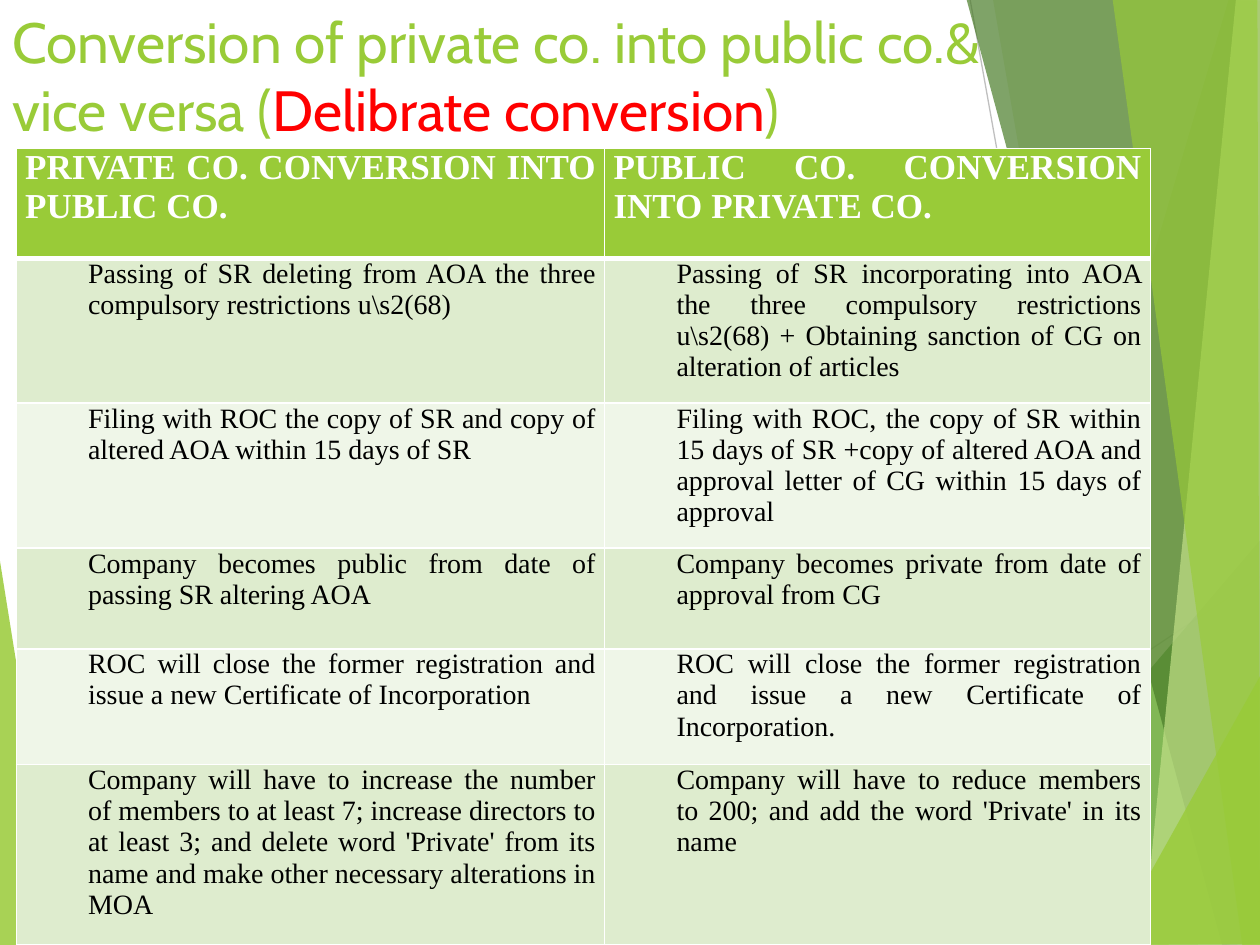
from dataclasses import dataclass

from lxml import etree
from pptx import Presentation
from pptx.dml.color import RGBColor
from pptx.enum.shapes import MSO_CONNECTOR
from pptx.enum.text import MSO_ANCHOR, MSO_AUTO_SIZE, PP_ALIGN
from pptx.oxml.ns import qn
from pptx.util import Inches, Pt

STRAIGHT = MSO_CONNECTOR.STRAIGHT
TOP = MSO_ANCHOR.TOP
NO_AUTOFIT = MSO_AUTO_SIZE.NONE
LEFT = PP_ALIGN.LEFT
JUSTIFY = PP_ALIGN.JUSTIFY

LIME = RGBColor(0x99, 0xCB, 0x38)
GREEN = RGBColor(0x63, 0xA5, 0x37)
FOREST = RGBColor(0x4A, 0x7C, 0x29)
PALE_LIME = RGBColor(0xC2, 0xE0, 0x88)
LIGHT_GRAY = RGBColor(0xD9, 0xD9, 0xD9)
GRAY = RGBColor(0xBF, 0xBF, 0xBF)
RED = RGBColor(0xFF, 0x00, 0x00)
WHITE = RGBColor(0xFF, 0xFF, 0xFF)
BLACK = RGBColor(0x00, 0x00, 0x00)
BANDS = (RGBColor(0xDE, 0xEC, 0xCE), RGBColor(0xEF, 0xF6, 0xE8))

Point = tuple[float, float]


@dataclass(frozen=True)
class Facet:
    points: tuple[Point, ...]
    color: RGBColor
    opacity: int


@dataclass(frozen=True)
class Ray:
    start: Point
    end: Point
    color: RGBColor


LEFT_FACET = Facet(((-0.01, 4.39), (0.49, 7.51), (-0.01, 7.5)), LIME, 85)
RAYS = (
    Ray((5.61, 7.5), (10.01, 4.57), LIGHT_GRAY),
    Ray((7.7, 0), (9.04, 7.5), GRAY),
)
RIGHT_FACETS = (
    Facet(((9.75, 0), (7.54, 7.5), (10.02, 7.51), (10.01, 0.01)), LIME, 30),
    Facet(((7.88, -0.01), (9.19, 7.5), (10.01, 7.5), (10.01, -0.01)), LIME, 20),
    Facet(((7.26, 7.5), (10, 4.29), (10.01, 7.5)), GREEN, 72),
    Facet(((7.67, -0.01), (9.7, 7.5), (10.01, 7.49), (10.01, -0.01)), FOREST, 70),
    Facet(((9.81, -0.01), (9.07, 7.5), (10.01, 7.5), (10, -0.01)), PALE_LIME, 70),
    Facet(((8.83, -0.01), (9.86, 7.5), (10, 7.5), (9.98, -0.01)), LIME, 65),
    Facet(((8.81, 7.5), (10.01, 5.35), (10.01, 7.49)), LIME, 80),
)

TITLE_RUNS = (
    ("Conversion of private co. into public co.& vice versa (", LIME),
    ("Delibrate conversion", RED),
    (")", LIME),
)
COLUMN_WIDTHS = (4.67, 4.33)
ROW_HEIGHTS = (0.87, 1.15, 1.15, 0.8, 0.92, 1.43)
ROWS = (
    ("PRIVATE CO. CONVERSION INTO PUBLIC CO.",
     "PUBLIC CO. CONVERSION INTO PRIVATE CO."),
    ("Passing of SR deleting from AOA the three compulsory restrictions u\\s2(68)",
     "Passing of SR incorporating into AOA the three compulsory restrictions "
     "u\\s2(68) + Obtaining sanction of CG on alteration of articles"),
    ("Filing with ROC the copy of SR and copy of altered AOA within 15 days of SR",
     "Filing with ROC, the copy of SR within 15 days of SR +copy of altered AOA "
     "and approval letter of CG within 15 days of approval"),
    ("Company becomes public from date of passing SR altering AOA",
     "Company becomes private from date of approval from CG"),
    ("ROC will close the former registration and issue a new Certificate of Incorporation",
     "ROC will close the former registration and issue a new Certificate of Incorporation."),
    ("Company will have to increase the number of members to at least 7; increase "
     "directors to at least 3; and delete word 'Private' from its name and make "
     "other necessary alterations in MOA",
     "Company will have to reduce members to 200; and add the word 'Private' in its name"),
)


def draw_facet(slide, facet: Facet) -> None:
    points = [(Inches(x), Inches(y)) for x, y in facet.points]
    builder = slide.shapes.build_freeform(*points[0])
    builder.add_line_segments(points[1:], close=True)
    shape = builder.convert_to_shape()
    shape.shadow.inherit = False
    shape.line.fill.background()
    shape.fill.solid()
    shape.fill.fore_color.rgb = facet.color
    color = shape._element.spPr.find(qn("a:solidFill"))[0]
    etree.SubElement(color, qn("a:alpha")).set("val", str(facet.opacity * 1000))


def draw_ray(slide, ray: Ray) -> None:
    connector = slide.shapes.add_connector(
        STRAIGHT, *(Inches(value) for value in ray.start + ray.end))
    connector.line.color.rgb = ray.color
    connector.line.width = Pt(0.75)
    etree.SubElement(connector._element.spPr, qn("a:effectLst"))


def write_title(slide) -> None:
    title = slide.shapes.title
    slide.shapes._spTree.append(title._element)
    title.left, title.top = Inches(0), Inches(0)
    title.width, title.height = Inches(8.36), Inches(1.18)
    frame = title.text_frame
    frame.word_wrap = True
    frame.auto_size = NO_AUTOFIT
    frame.vertical_anchor = TOP
    paragraph = frame.paragraphs[0]
    paragraph.alignment = LEFT
    paragraph.font.name = "Cabin"
    paragraph.font.size = Pt(32.4)
    for text, color in TITLE_RUNS:
        run = paragraph.add_run()
        run.text = text
        run.font.color.rgb = color


def set_borders(cell, top: float, bottom: float) -> None:
    properties = cell._tc.get_or_add_tcPr()
    widths = {"a:lnL": 1, "a:lnR": 1, "a:lnT": top, "a:lnB": bottom}
    for index, (tag, width) in enumerate(widths.items()):
        line = etree.Element(qn(tag), w=str(Pt(width)))
        fill = etree.SubElement(line, qn("a:solidFill"))
        etree.SubElement(fill, qn("a:srgbClr")).set("val", str(WHITE))
        properties.insert(index, line)


def write_cell(cell, text: str, row: int) -> None:
    header = row == 0
    cell.text = text
    cell.margin_left = cell.margin_right = Inches(0.07)
    cell.margin_top = cell.margin_bottom = Inches(0)
    cell.vertical_anchor = TOP
    cell.fill.solid()
    cell.fill.fore_color.rgb = LIME if header else BANDS[(row - 1) % 2]
    paragraph = cell.text_frame.paragraphs[0]
    paragraph.alignment = JUSTIFY
    paragraph.font.name = "Times New Roman"
    paragraph.font.size = Pt(20 if header else 16)
    paragraph.font.bold = header
    paragraph.font.color.rgb = WHITE if header else BLACK
    if not header:
        indent = paragraph._p.get_or_add_pPr()
        indent.set("marL", str(Inches(0.5)))
        indent.set("indent", "0")
    set_borders(cell, top=3 if row == 1 else 1, bottom=3 if header else 1)


def draw_table(slide) -> None:
    table = slide.shapes.add_table(
        len(ROWS), len(COLUMN_WIDTHS), Inches(0.13), Inches(1.18),
        Inches(sum(COLUMN_WIDTHS)), Inches(sum(ROW_HEIGHTS))).table
    for column, width in zip(table.columns, COLUMN_WIDTHS):
        column.width = Inches(width)
    for row, (texts, height) in enumerate(zip(ROWS, ROW_HEIGHTS)):
        table.rows[row].height = Inches(height)
        for column, text in enumerate(texts):
            write_cell(table.cell(row, column), text, row)


def main() -> None:
    presentation = Presentation()
    presentation.slide_width = Inches(10)
    presentation.slide_height = Inches(7.5)
    slide = presentation.slides.add_slide(presentation.slide_layouts[5])
    draw_facet(slide, LEFT_FACET)
    for ray in RAYS:
        draw_ray(slide, ray)
    for facet in RIGHT_FACETS:
        draw_facet(slide, facet)
    write_title(slide)
    draw_table(slide)
    presentation.save("out.pptx")


if __name__ == "__main__":
    main()
